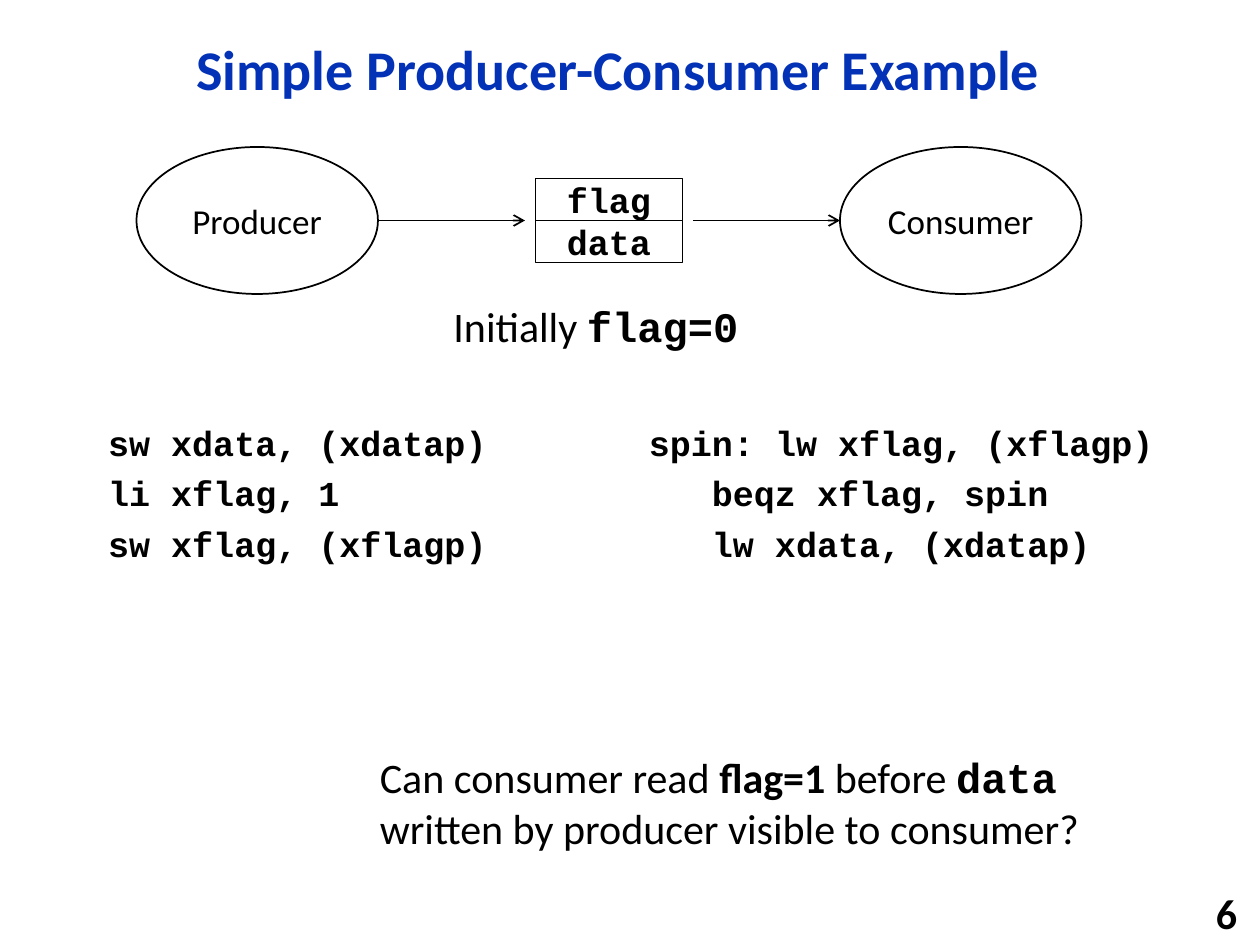
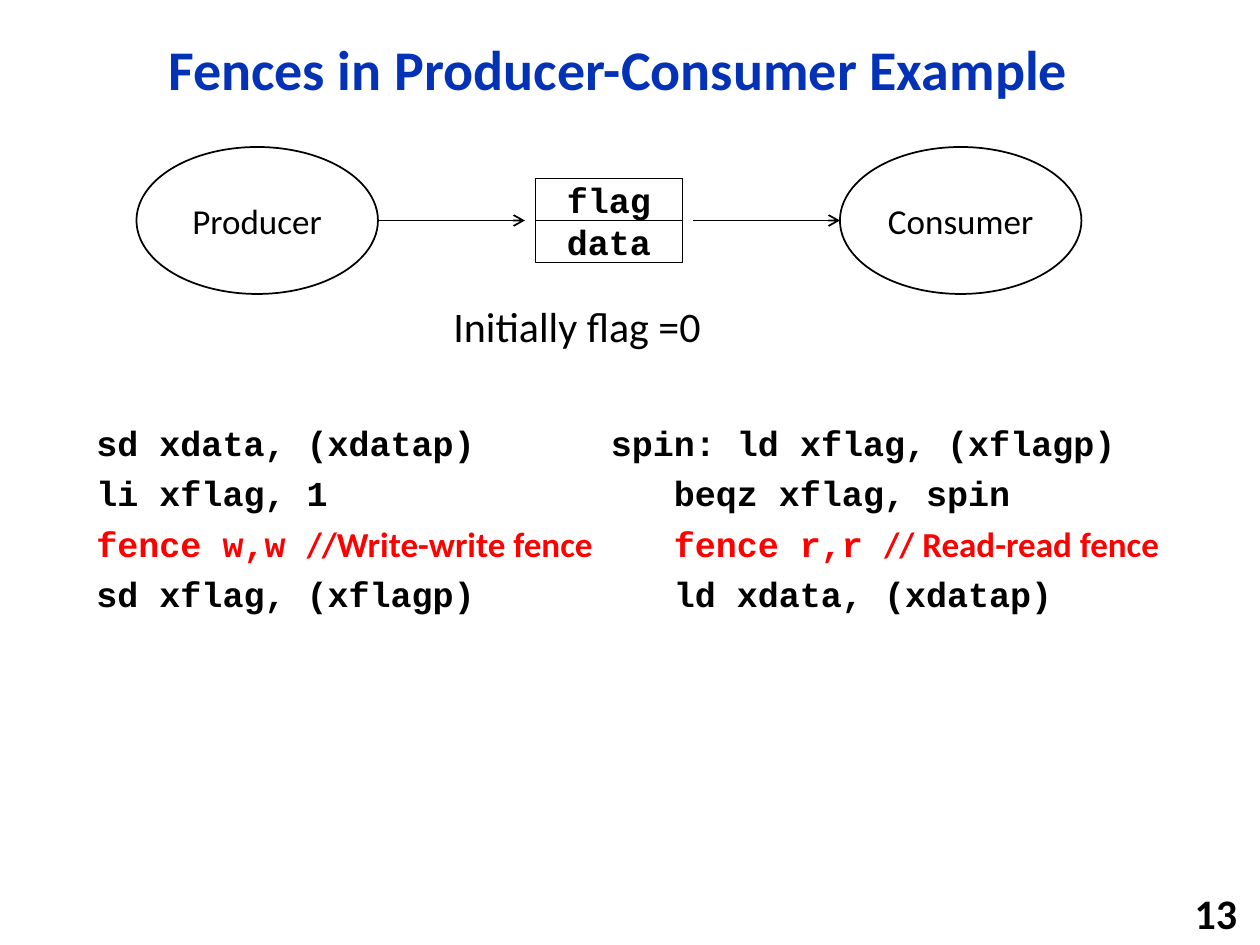
from dataclasses import dataclass

from lxml import etree
from pptx import Presentation
from pptx.dml.color import RGBColor
from pptx.enum.shapes import MSO_CONNECTOR, MSO_SHAPE
from pptx.enum.text import MSO_ANCHOR, PP_ALIGN
from pptx.oxml.ns import qn
from pptx.slide import Slide
from pptx.text.text import TextFrame
from pptx.util import Emu, Pt

EMU_PER_PX = 9525

BLUE = RGBColor(0x03, 0x32, 0xB7)
BLACK = RGBColor(0x00, 0x00, 0x00)
WHITE = RGBColor(0xFF, 0xFF, 0xFF)
RED = RGBColor(0xFF, 0x00, 0x00)

SANS = "Calibri"
MONO = "Courier New"

LEFT, CENTER, RIGHT = PP_ALIGN.LEFT, PP_ALIGN.CENTER, PP_ALIGN.RIGHT
TOP, MIDDLE = MSO_ANCHOR.TOP, MSO_ANCHOR.MIDDLE
RECTANGLE, ELLIPSE = MSO_SHAPE.RECTANGLE, MSO_SHAPE.OVAL
STRAIGHT = MSO_CONNECTOR.STRAIGHT


@dataclass(frozen=True)
class Area:
    left: int
    top: int
    width: int
    height: int

    def emu(self) -> tuple[Emu, ...]:
        return tuple(px(n) for n in (self.left, self.top, self.width, self.height))


@dataclass(frozen=True)
class Span:
    text: str
    font: str = SANS
    size: int = 24
    bold: bool = False
    color: RGBColor = BLACK


Line = tuple[Span, ...]


@dataclass(frozen=True)
class Node:
    kind: MSO_SHAPE
    area: Area
    label: Span


@dataclass(frozen=True)
class TextBox:
    area: Area
    lines: tuple[Line, ...]
    align: PP_ALIGN = LEFT
    anchor: MSO_ANCHOR = TOP
    wrap: bool = True
    line_spacing: float = 1.0
    space_before: float = 0


@dataclass(frozen=True)
class PageContent:
    title: str
    number: str
    boxes: tuple[TextBox, ...]


def px(length: int) -> Emu:
    return Emu(length * EMU_PER_PX)


def code(text: str, color: RGBColor = BLACK) -> Span:
    return Span(text, MONO, 20, True, color)


def fence(instruction: str, remark: str) -> Line:
    return code(instruction, RED), Span(remark, SANS, 20, True, RED)


def listing(left: int, width: int, *lines: str | Line) -> TextBox:
    rows = tuple((code(line),) if isinstance(line, str) else line for line in lines)
    return TextBox(Area(left, 320, width, 323), rows,
                   line_spacing=0.9, space_before=7.2)


def initial_state(width: int, *spans: Span) -> TextBox:
    return TextBox(Area(336, 224, width, 48), (spans,), wrap=False)


NODES = (
    Node(RECTANGLE, Area(408, 168, 112, 32), code("data")),
    Node(RECTANGLE, Area(408, 136, 112, 32), code("flag")),
    Node(ELLIPSE, Area(104, 112, 184, 112), Span("Producer", size=20)),
    Node(ELLIPSE, Area(640, 112, 184, 112), Span("Consumer", size=20)),
)
ARROW_STARTS = (288, 528)
ARROW_LENGTH = 112
ARROW_Y = 168

PAGES = (
    PageContent(
        "Simple Producer-Consumer Example", "6",
        (
            listing(73, 396, "sw xdata, (xdatap)", "li xflag, 1",
                    "sw xflag, (xflagp)"),
            listing(485, 435, "spin: lw xflag, (xflagp)", "\tbeqz xflag, spin",
                    "\tlw xdata, (xdatap)"),
            TextBox(Area(280, 568, 576, 87), ((
                Span("Can consumer read "),
                Span("flag=1", bold=True),
                Span(" before "),
                Span("data", MONO, bold=True),
                Span(" written by producer visible to consumer?"),
            ),)),
            initial_state(238, Span("Initially "), Span("flag=0", MONO, bold=True)),
        ),
    ),
    PageContent(
        "Fences in Producer-Consumer Example", "13",
        (
            listing(64, 420, "sd xdata, (xdatap)", "li xflag, 1",
                    fence("fence w,w ", "//Write-write fence"),
                    "sd xflag, (xflagp)"),
            listing(456, 488, "spin: ld xflag, (xflagp)", "\tbeqz xflag, spin",
                    fence("\tfence r,r ", "// Read-read fence"),
                    "\tld xdata, (xdatap)"),
            initial_state(209, Span("Initially flag =0")),
        ),
    ),
)


def write_lines(frame: TextFrame, lines: tuple[Line, ...], align: PP_ALIGN,
                line_spacing: float = 1.0, space_before: float = 0) -> None:
    for index, line in enumerate(lines):
        para = frame.add_paragraph() if index else frame.paragraphs[0]
        para.alignment = align
        para.line_spacing = line_spacing
        para.space_before = Pt(space_before)
        for span in line:
            run = para.add_run()
            run.text = span.text
            run.font.name = span.font
            run.font.size = Pt(span.size)
            run.font.bold = span.bold
            run.font.color.rgb = span.color


def draw_text(page: Slide, content: TextBox) -> None:
    frame = page.shapes.add_textbox(*content.area.emu()).text_frame
    frame.word_wrap = content.wrap
    frame.vertical_anchor = content.anchor
    write_lines(frame, content.lines, content.align,
                content.line_spacing, content.space_before)


def draw_node(page: Slide, node: Node) -> None:
    shape = page.shapes.add_shape(node.kind, *node.area.emu())
    shape.shadow.inherit = False
    shape.fill.solid()
    shape.fill.fore_color.rgb = WHITE
    shape.line.color.rgb = BLACK
    shape.line.width = Pt(1)
    frame = shape.text_frame
    frame.margin_left = frame.margin_right = 0
    frame.margin_top = frame.margin_bottom = 0
    frame.vertical_anchor = MIDDLE
    write_lines(frame, ((node.label,),), CENTER)


def draw_arrow(page: Slide, start: int) -> None:
    arrow = page.shapes.add_connector(
        STRAIGHT, px(start), px(ARROW_Y), px(start + ARROW_LENGTH), px(ARROW_Y))
    arrow.line.color.rgb = BLACK
    arrow.line.width = Pt(1)
    etree.SubElement(arrow.line._get_or_add_ln(), qn("a:tailEnd"), type="arrow")
    etree.SubElement(arrow._element.spPr, qn("a:effectLst"))


def draw_page(page: Slide, content: PageContent) -> None:
    title = Span(content.title, size=32, bold=True, color=BLUE)
    number = Span(content.number, bold=True)
    draw_text(page, TextBox(Area(88, 16, 766, 78), ((title,),),
                            CENTER, MIDDLE, line_spacing=0.9))
    draw_text(page, TextBox(Area(752, 680, 200, 31), ((number,),), RIGHT, MIDDLE))
    for node in NODES:
        draw_node(page, node)
    for start in ARROW_STARTS:
        draw_arrow(page, start)
    for box in content.boxes:
        draw_text(page, box)


def main() -> None:
    deck = Presentation()
    deck.slide_width, deck.slide_height = px(960), px(720)
    blank = deck.slide_layouts[6]
    for content in PAGES:
        draw_page(deck.slides.add_slide(blank), content)
    deck.save("out.pptx")


if __name__ == "__main__":
    main()
